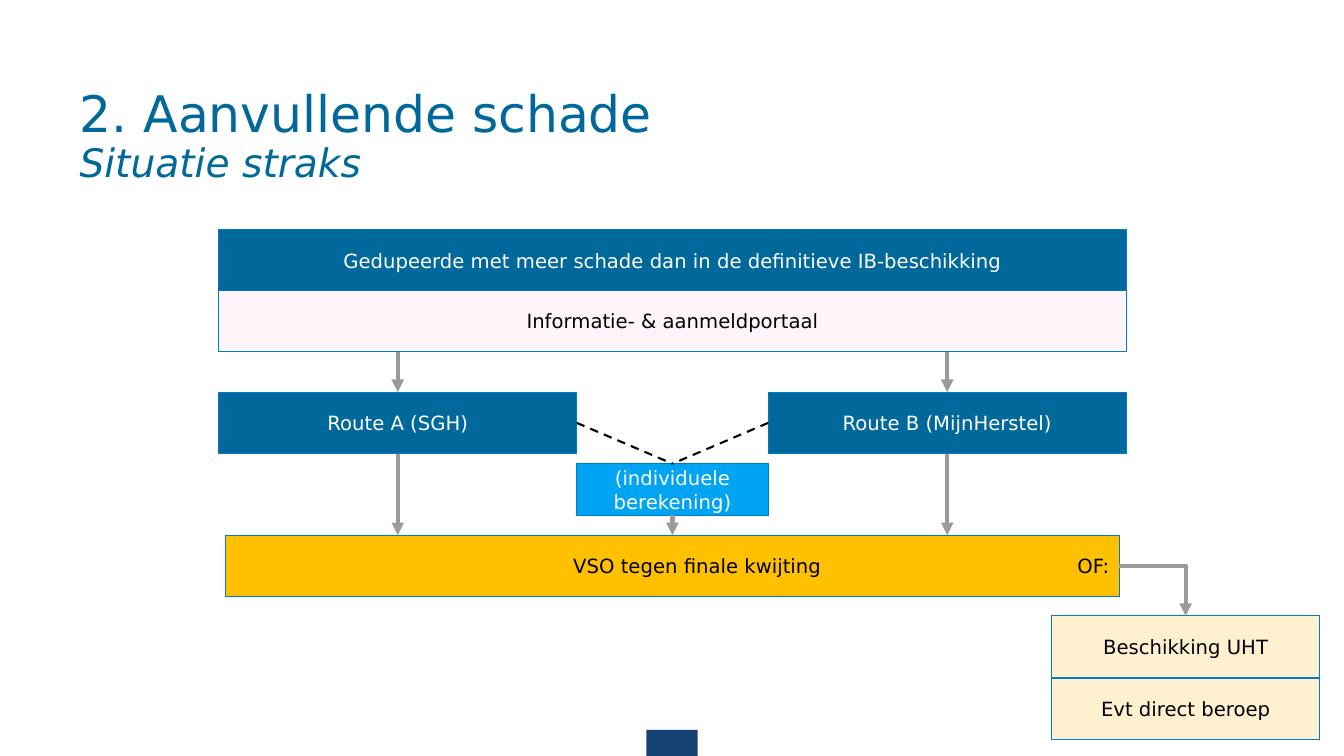
from lxml.etree import SubElement
from pptx import Presentation
from pptx.dml.color import RGBColor
from pptx.enum.dml import MSO_LINE
from pptx.enum.shapes import MSO_CONNECTOR, MSO_SHAPE
from pptx.enum.text import MSO_ANCHOR, PP_ALIGN
from pptx.oxml.ns import qn
from pptx.util import Inches, Pt

FONT = "DejaVu Sans"
BLUE = RGBColor(0x00, 0x68, 0x9A)
BRIGHT = RGBColor(0x00, 0xA4, 0xF3)
NAVY = RGBColor(0x15, 0x42, 0x73)
PINK = RGBColor(0xFE, 0xF4, 0xFA)
AMBER = RGBColor(0xFF, 0xC0, 0x00)
CREAM = RGBColor(0xFF, 0xF0, 0xD0)
EDGE = RGBColor(0x01, 0x7B, 0xC6)
GREY = RGBColor(0x9A, 0x9A, 0x9A)
BLACK = RGBColor(0, 0, 0)
WHITE = RGBColor(0xFF, 0xFF, 0xFF)

TITLE = "2. Aanvullende schade"
SUBTITLE = "Situatie straks"
ROW = 0.61
TOP, LEFT, BOTTOM, RIGHT = range(4)  # connection sites of a rectangle

# name: (text, left, top, width, height, fill, text colour)
STEPS = {
    "victim": ("Gedupeerde met meer schade dan in de definitieve IB-beschikking",
               2.17, 2.28, 9, ROW, BLUE, WHITE),
    "portal": ("Informatie- & aanmeldportaal", 2.17, 2.88, 9, ROW, PINK, BLACK),
    "route_a": ("Route A (SGH)", 2.17, 3.89, 3.55, ROW, BLUE, WHITE),
    "route_b": ("Route B (MijnHerstel)", 7.62, 3.89, 3.55, ROW, BLUE, WHITE),
    "calculation": ("(individuele berekening)", 5.72, 4.6, 1.9, 0.51, BRIGHT, WHITE),
    "settlement": ("VSO tegen finale kwijting\tOF:", 2.24, 5.31, 8.86, ROW, AMBER, BLACK),
    "decision": ("Beschikking UHT", 10.43, 6.11, 2.66, ROW, CREAM, BLACK),
    "appeal": ("Evt direct beroep", 10.43, 6.73, 2.66, ROW, CREAM, BLACK),
}

prs = Presentation()
prs.slide_width, prs.slide_height = Inches(13.33), Inches(7.5)
slide = prs.slides.add_slide(prs.slide_layouts[6])


def add_text(paragraph, text, size=14, color=BLACK, italic=False):
    run = paragraph.add_run()
    run.text = text
    run.font.name, run.font.size = FONT, Pt(size)
    run.font.italic, run.font.color.rgb = italic, color


def add_box(left, top, width, height, fill):
    box = slide.shapes.add_shape(MSO_SHAPE.RECTANGLE, Inches(left), Inches(top),
                                 Inches(width), Inches(height))
    box.shadow.inherit = False
    box.fill.solid()
    box.fill.fore_color.rgb = fill
    box.line.fill.background()
    return box


def add_step(text, left, top, width, height, fill, color):
    box = add_box(left, top, width, height, fill)
    box.line.color.rgb, box.line.width = EDGE, Pt(0.75)
    frame = box.text_frame
    frame.word_wrap, frame.vertical_anchor = True, MSO_ANCHOR.MIDDLE
    paragraph = frame.paragraphs[0]
    paragraph.alignment = PP_ALIGN.CENTER
    if "\t" in text:
        paragraph.alignment = PP_ALIGN.RIGHT
        tabs = SubElement(paragraph._p.get_or_add_pPr(), qn("a:tabLst"))
        SubElement(tabs, qn("a:tab"), pos=str(Inches(5)), algn="l")
    add_text(paragraph, text, color=color)
    return box


def add_link(start, end, kind=MSO_CONNECTOR.STRAIGHT, dashed=False):
    """Join two ends, each an (x, y) point or a (box, site) pair."""
    points = [(0, 0) if hasattr(stop[0], "shape_id") else stop for stop in (start, end)]
    link = slide.shapes.add_connector(kind, *points[0], *points[1])
    for stop, connect in ((start, link.begin_connect), (end, link.end_connect)):
        if hasattr(stop[0], "shape_id"):
            connect(*stop)
    link.line.color.rgb = BLACK if dashed else GREY
    link.line.width = Pt(1.5 if dashed else 3)
    if dashed:
        link.line.dash_style = MSO_LINE.DASH
    else:
        SubElement(link.line._get_or_add_ln(), qn("a:tailEnd"), type="triangle")
    SubElement(link._element.spPr, qn("a:effectLst"))
    return link


add_box(6.41, 7.24, 0.51, 0.26, NAVY)

title = slide.shapes.add_textbox(Inches(0.69), Inches(0.7), Inches(11.95), Inches(1.19))
title.text_frame.word_wrap = True
title.text_frame.vertical_anchor = MSO_ANCHOR.BOTTOM
heading = title.text_frame.paragraphs[0]
heading.line_spacing = 0.9
add_text(heading, TITLE, size=36, color=BLUE)
heading.add_line_break()
add_text(heading, SUBTITLE, size=28, color=BLUE, italic=True)

steps = {name: add_step(*step) for name, step in STEPS.items()}
portal, calculation, settlement = (
    steps[name] for name in ("portal", "calculation", "settlement"))

for route, inner_side in ((steps["route_a"], RIGHT), (steps["route_b"], LEFT)):
    middle = route.left + route.width // 2
    add_link((middle, portal.top + portal.height), (route, TOP))
    add_link((route, BOTTOM), (middle, settlement.top))
    add_link((route, inner_side), (calculation, TOP), dashed=True)

add_link((calculation, BOTTOM), (settlement, TOP))
elbow = add_link((settlement, RIGHT), (steps["decision"], TOP), MSO_CONNECTOR.ELBOW)
elbow._element.spPr.find(qn("a:prstGeom")).set("prst", "bentConnector2")

prs.save("out.pptx")
